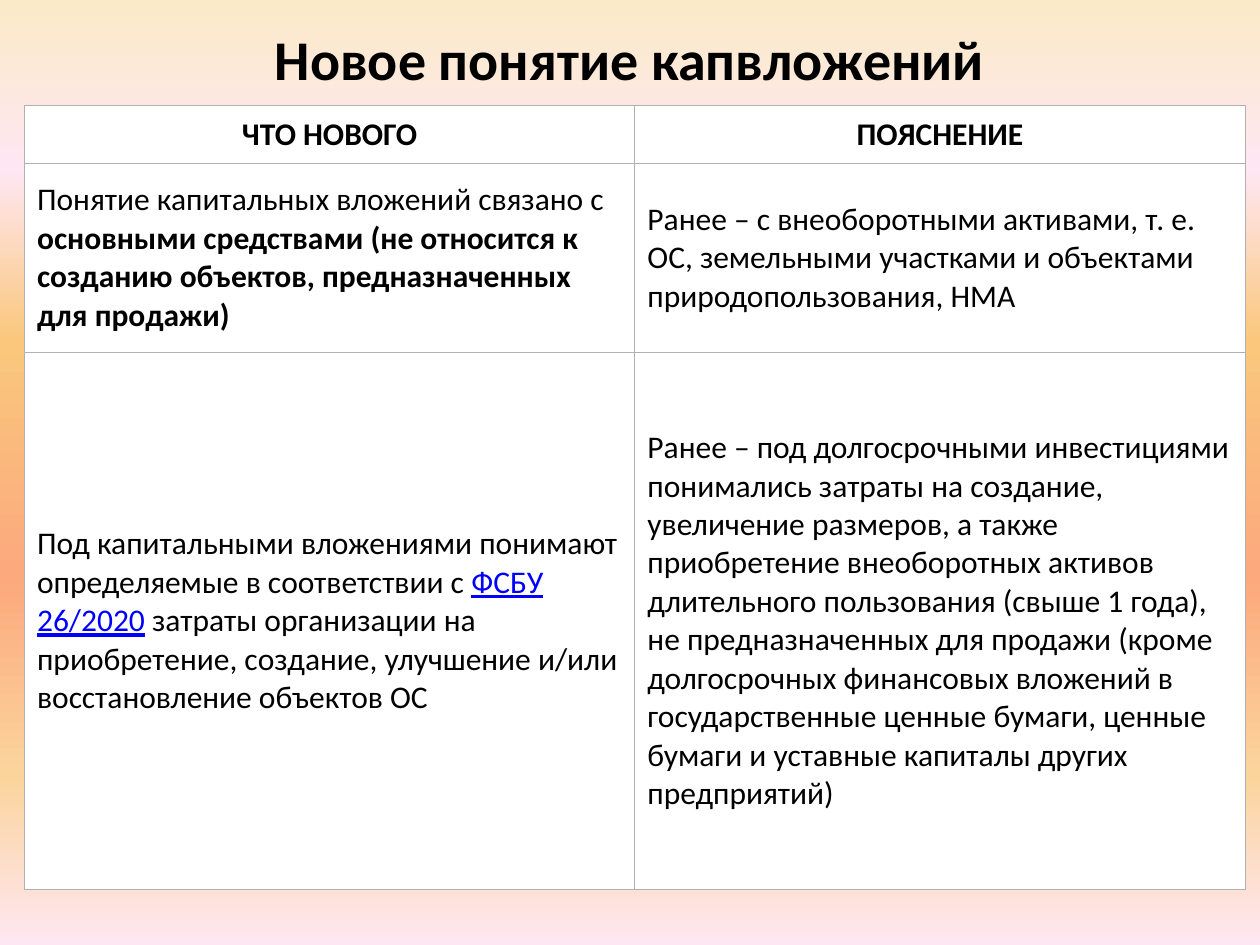
"""Builds a slide that compares the new and old notions of capital investment."""
import dataclasses

import lxml.etree
import pptx
import pptx.dml.color
import pptx.enum.text
import pptx.oxml.ns
import pptx.util

Pt = pptx.util.Pt
qn = pptx.oxml.ns.qn
ALIGN = pptx.enum.text.PP_ALIGN
MIDDLE = pptx.enum.text.MSO_ANCHOR.MIDDLE


@dataclasses.dataclass(frozen=True)
class Theme:
    """Colours, font and type sizes."""
    font: str = "Calibri"
    title: int = 32
    body: int = 18
    ink: str = "000000"
    link: str = "0000FF"
    paper: str = "FFFFFF"
    rule: str = "B4B0B0"
    width: float = 0.6
    glow: tuple = ((0, "FBEAC7"), (18, "FEE7F2"), (36, "FAC77D"),
                   (61, "FBA97D"), (82, "FBD49C"), (100, "FEE7F2"))


THEME = Theme()


def color(code):
    """Turn a hex code into a colour."""
    return pptx.dml.color.RGBColor.from_string(code)


def node(root, tag, **attrs):
    """Append a drawing element and return it."""
    return lxml.etree.SubElement(root, qn(tag), attrs)


def write(frame, *parts, size=THEME.body, bold=False, align=ALIGN.LEFT):
    """Fill a frame with one paragraph of strings or (string, format) pairs."""
    frame.word_wrap = True
    para = frame.paragraphs[0]
    para.alignment = align
    for part in parts:
        text, look = (part, {}) if isinstance(part, str) else part
        run = para.add_run()
        run.text = text
        font = run.font
        font.name = THEME.font
        font.size = Pt(size)
        font.bold = look.get("bold", bold)
        font.underline = look.get("under", False)
        font.color.rgb = color(look.get("ink", THEME.ink))


class Deck:
    """Holds the theme and the current slide."""

    def __init__(self, theme, width, height):
        """Start a deck with one blank slide."""
        self.theme = theme
        self.show = pptx.Presentation()
        self.show.slide_width = Pt(width)
        self.show.slide_height = Pt(height)
        self.slide = self.show.slides.add_slide(self.show.slide_layouts[6])

    def back(self):
        """Paint the background with the vertical blend of the theme."""
        self.slide.background.fill.gradient()
        blend = self.slide.element.find(".//" + qn("a:gradFill"))
        stops = blend.find(qn("a:gsLst"))
        for stop in list(stops):
            stops.remove(stop)
        for place, code in self.theme.glow:
            stop = node(stops, "a:gs", pos=str(place * 1000))
            node(stop, "a:srgbClr", val=code)
        blend.find(qn("a:lin")).set("ang", str(90 * 60000))

    def title(self, text, left, top, width, height):
        """Add the centred heading."""
        box = self.slide.shapes.add_textbox(Pt(left), Pt(top), Pt(width), Pt(height))
        box.text_frame.vertical_anchor = MIDDLE
        write(box.text_frame, text, size=self.theme.title, bold=True,
              align=ALIGN.CENTER)

    def border(self, cell):
        """Draw a thin line on all four sides of a cell."""
        props = cell._tc.get_or_add_tcPr()
        for side in "LRTB":
            line = node(props, "a:ln" + side, w=str(Pt(self.theme.width)))
            node(node(line, "a:solidFill"), "a:srgbClr", val=self.theme.rule)

    def table(self, rows, left, top, width, heights):
        """Add a table of equal columns whose first row is the header."""
        count = len(rows[0])
        table = self.slide.shapes.add_table(
            len(rows), count, Pt(left), Pt(top), Pt(width), Pt(sum(heights))).table
        table.first_row = table.horz_banding = False
        for col in table.columns:
            col.width = Pt(width / count)
        for i, (row, height) in enumerate(zip(rows, heights)):
            table.rows[i].height = Pt(height)
            head = i == 0
            for j, parts in enumerate(row):
                cell = table.cell(i, j)
                self.border(cell)
                cell.fill.solid()
                cell.fill.fore_color.rgb = color(self.theme.paper)
                cell.vertical_anchor = MIDDLE
                write(cell.text_frame, *parts, bold=head,
                      align=ALIGN.CENTER if head else ALIGN.LEFT)


ROWS = (
    (("ЧТО НОВОГО",), ("ПОЯСНЕНИЕ",)),
    (("Понятие капитальных вложений связано с ",
      ("основными средствами (не относится к созданию объектов, "
       "предназначенных для продажи)", {"bold": True})),
     ("Ранее – с внеоборотными активами, т. е. ОС, земельными участками "
      "и объектами природопользования, НМА",)),
    (("Под капитальными вложениями понимают определяемые в соответствии с ",
      ("ФСБУ 26/2020", {"ink": THEME.link, "under": True}),
      " затраты организации на приобретение, создание, улучшение и/или "
      "восстановление объектов ОС"),
     ("Ранее – под долгосрочными инвестициями понимались затраты на создание, "
      "увеличение размеров, а также приобретение внеоборотных активов "
      "длительного пользования (свыше 1 года), не предназначенных для продажи "
      "(кроме долгосрочных финансовых вложений в государственные ценные бумаги, "
      "ценные бумаги и уставные капиталы других предприятий)",)),
)


def main():
    """Build and save the slide."""
    deck = Deck(THEME, 720, 540)
    deck.back()
    deck.title("Новое понятие капвложений", 0, 0, 720, 66)
    deck.table(ROWS, 14, 60.3, 697.6, (33, 108, 307))
    deck.show.save("out.pptx")


if __name__ == "__main__":
    main()
